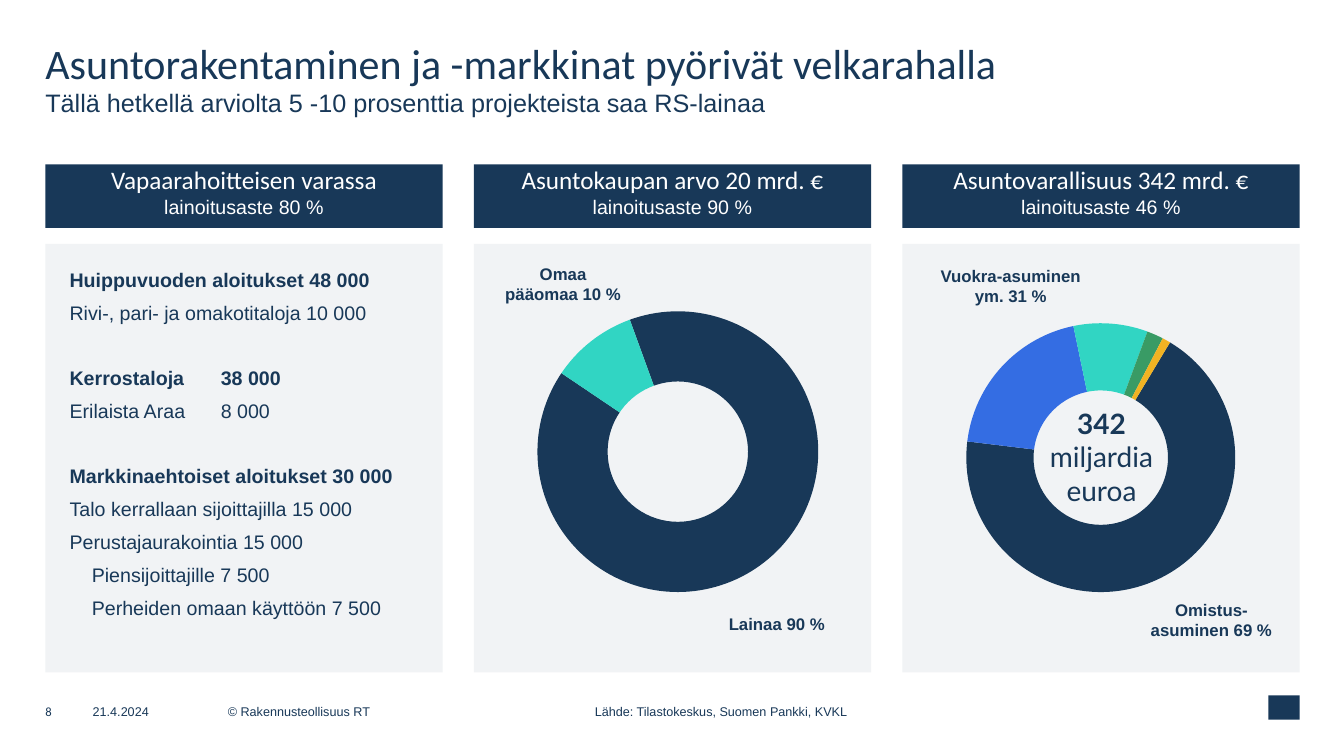
from pptx import Presentation
from pptx.chart.data import CategoryChartData
from pptx.dml.color import RGBColor
from pptx.enum import chart as charts, shapes, text
from pptx.oxml import parse_xml
from pptx.oxml.ns import nsdecls, qn
from pptx.util import Inches, Pt

NAVY = RGBColor(0x18, 0x38, 0x58)
BLUE = RGBColor(0x34, 0x6D, 0xE3)
TEAL = RGBColor(0x31, 0xD5, 0xC3)
GREEN = RGBColor(0x39, 0x9B, 0x65)
AMBER = RGBColor(0xF1, 0xB3, 0x23)
PALE = RGBColor(0xF1, 0xF3, 0xF5)
WHITE = RGBColor(0xFF, 0xFF, 0xFF)
LEFT, CENTER = text.PP_ALIGN.LEFT, text.PP_ALIGN.CENTER
TOP, MIDDLE = text.MSO_ANCHOR.TOP, text.MSO_ANCHOR.MIDDLE

MARGIN, COLUMN_STEP, COLUMN_WIDTH = 0.45, 4.25, 3.94
HEADER_TOP, HEADER_HEIGHT = 1.63, 0.63
PANEL_TOP, PANEL_HEIGHT = 2.42, 4.25
FOOTER_TOP, FOOTER_HEIGHT = 6.98, 0.16

HEADERS = [
    ("Vapaarahoitteisen varassa", "lainoitusaste 80 %"),
    ("Asuntokaupan arvo 20 mrd. €", "lainoitusaste 90 %"),
    ("Asuntovarallisuus 342 mrd. €", "lainoitusaste 46 %"),
]
START_GROUPS = [
    [("Huippuvuoden aloitukset 48 000", 0), ("Rivi-, pari- ja omakotitaloja 10 000", 0)],
    [("Kerrostaloja\t38 000", 0), ("Erilaista Araa\t8 000", 0)],
    [("Markkinaehtoiset aloitukset 30 000", 0), ("Talo kerrallaan sijoittajilla 15 000", 0),
     ("Perustajaurakointia 15 000", 0), ("Piensijoittajille 7 500", 0.22),
     ("Perheiden omaan käyttöön 7 500", 0.22)],
]
FOOTERS = [
    ("8", "Calibri", 0.45, 0.47),
    ("21.4.2024", "Arial", 0.92, 1.34),
    ("© Rakennusteollisuus RT", "Arial", 2.26, 3.5),
    ("Lähde: Tilastokeskus, Suomen Pankki, KVKL", "Arial", 5.9, 2.79),
]


def write(frame, words, font="Arial", size=14, color=NAVY, bold=False,
          align=LEFT, before=0, indent=0, tab=None, new=True):
    """Add words as a new paragraph, or as a run of the last one."""
    para = frame.paragraphs[-1]
    if para.runs and new:
        para = frame.add_paragraph()
    if not para.runs:
        para.alignment = align
        para.space_before = Pt(before)
        props = para._p.get_or_add_pPr()
        props.set("marL", str(Inches(indent)))
        props.set("indent", "0")
        props.append(parse_xml(f"<a:buNone {nsdecls('a')}/>"))
        if tab:
            props.append(parse_xml(
                f'<a:tabLst {nsdecls("a")}><a:tab pos="{Inches(tab)}" algn="l"/></a:tabLst>'))
    run = para.add_run()
    run.text = words
    run.font.name, run.font.size, run.font.bold = font, Pt(size), bold
    run.font.color.rgb = color


def fit(shape, box, inset=0, anchor=TOP):
    """Place a text shape in its box and return its frame."""
    shape.left, shape.top, shape.width, shape.height = map(Inches, box)
    frame = shape.text_frame
    frame.word_wrap = True
    frame.auto_size = text.MSO_AUTO_SIZE.NONE
    frame.vertical_anchor = anchor
    frame.margin_left = frame.margin_right = Inches(inset)
    frame.margin_top = frame.margin_bottom = Inches(inset)
    return frame


def fill(shape, color):
    """Fill a shape with a plain colour and no outline."""
    shape.fill.solid()
    shape.fill.fore_color.rgb = color
    shape.line.fill.background()


def text_box(slide, box, inset=0.05, anchor=TOP):
    """Add a text box and return its frame."""
    return fit(slide.shapes.add_textbox(*map(Inches, box)), box, inset, anchor)


def add_title(slide, box):
    """Write the title with its smaller second line."""
    frame = fit(slide.shapes.title, box)
    write(frame, "Asuntorakentaminen ja -markkinat pyörivät velkarahalla",
          font="Calibri", size=30)
    frame.paragraphs[0].add_line_break()
    write(frame, "Tällä hetkellä arviolta 5 -10 prosenttia projekteista saa RS-lainaa",
          size=18, new=False)


def add_header(holder, box, heading, loan_rate):
    """Fill one column header."""
    frame = fit(holder, box)
    fill(holder, NAVY)
    write(frame, heading, font="Calibri", size=18, color=WHITE, align=CENTER)
    write(frame, loan_rate, color=WHITE, align=CENTER)


def add_starts(holder, box):
    """Fill the panel that lists housing starts by group."""
    frame = fit(holder, box, inset=0.24)
    fill(holder, PALE)
    for group_no, group in enumerate(START_GROUPS):
        for row_no, (words, indent) in enumerate(group):
            group_gap = 29.5 if group_no else 0
            write(frame, words, bold=row_no == 0, indent=indent, tab=2,
                  before=6.75 if row_no else group_gap)


def add_doughnut(slide, box, values, colors, start, plot_area):
    """Add a doughnut chart on a pale panel."""
    data = CategoryChartData()
    data.categories = [str(n + 1) for n in range(len(values))]
    data.add_series("Series 1", values)
    chart = slide.shapes.add_chart(
        charts.XL_CHART_TYPE.DOUGHNUT, *map(Inches, box), data).chart
    chart.has_legend = chart.has_title = False
    chart.font.name, chart.font.size = "Arial", Pt(10)
    plot = chart.plots[0]
    plot.vary_by_categories = True
    for number, color in enumerate(colors):
        slice_format = plot.series[0].points[number].format
        fill(slice_format, color)

    root = chart.element
    for tag, value in (("c:firstSliceAng", start), ("c:holeSize", 50)):
        next(root.iter(qn(tag))).set("val", str(value))
    area = next(root.iter(qn("c:plotArea")))
    for layout in area.findall(qn("c:layout")):
        area.remove(layout)
    sides = "".join(f'<c:{side} val="{value}"/>' for side, value in zip("xywh", plot_area))
    area.insert(0, parse_xml(
        f'<c:layout {nsdecls("c")}><c:manualLayout><c:layoutTarget val="inner"/>'
        f'<c:xMode val="edge"/><c:yMode val="edge"/>{sides}</c:manualLayout></c:layout>'))
    root.find(qn("c:chart")).addnext(parse_xml(
        f'<c:spPr {nsdecls("c", "a")}><a:solidFill><a:srgbClr val="{PALE}"/></a:solidFill>'
        '<a:ln><a:noFill/></a:ln></c:spPr>'))


def add_labels(slide, box, labels):
    """Write slice labels at offsets from the panel's corner."""
    left, top = box[:2]
    for lines, dx, dy, width in labels:
        frame = text_box(slide, (left + dx, top + dy, width, 0.5))
        for line in lines:
            write(frame, line, size=12, bold=True, align=CENTER)


def add_sales(slide, box):
    """Show the financing of home sales."""
    add_doughnut(slide, box, (90, 10), (NAVY, TEAL), 340, (0.16, 0.157, 0.707, 0.656))
    add_labels(slide, box, [(["Omaa", "pääomaa 10 %"], -0.09, 0.15, 1.95),
                            (["Lainaa 90 %"], 2.03, 3.62, 1.95)])


def add_wealth(slide, box):
    """Show housing wealth with its total in the middle."""
    add_doughnut(slide, box, (69, 20, 9, 2, 1), (NAVY, BLUE, TEAL, GREEN, AMBER),
                 31, (0.161, 0.185, 0.677, 0.628))
    total = text_box(slide, (box[0] + 1.23, box[1] + 1.56, 1.49, 1.11))
    total.margin_left = total.margin_right = Inches(0.1)
    write(total, "342", font="Lato", size=20, bold=True, align=CENTER)
    write(total, " miljardia euroa", font="Lato", size=20, new=False)
    add_labels(slide, box, [(["Vuokra-asuminen ym. 31 %"], 0.19, 0.17, 1.77),
                            (["Omistus-", "asuminen 69 %"], 2.07, 3.48, 1.99)])


def add_footer(slide, top, height):
    """Write the footer line and the plain mark at its end."""
    for words, font, left, width in FOOTERS:
        write(text_box(slide, (left, top, width, height), 0, MIDDLE), words, font=font, size=9)
    mark = slide.shapes.add_shape(shapes.MSO_SHAPE.RECTANGLE, Inches(12.58),
                                  Inches(top - 0.08), Inches(0.31), Inches(0.24))
    mark.shadow.inherit = False
    fill(mark, NAVY)


def main():
    """Build the slide and save it."""
    deck = Presentation()
    deck.slide_width, deck.slide_height = Inches(13.33), Inches(7.5)
    slide = deck.slides.add_slide(deck.slide_layouts.get_by_name("Comparison"))
    *header_holders, starts_holder = list(slide.placeholders)[1:]
    lefts = [MARGIN + COLUMN_STEP * n for n in range(3)]
    panels = [(left, PANEL_TOP, COLUMN_WIDTH, PANEL_HEIGHT) for left in lefts]

    add_title(slide, (MARGIN, 0.37, 12.44, 1.1))
    for holder, left, words in zip(header_holders, lefts, HEADERS):
        add_header(holder, (left, HEADER_TOP, COLUMN_WIDTH, HEADER_HEIGHT), *words)
    add_starts(starts_holder, panels[0])
    add_sales(slide, panels[1])
    add_wealth(slide, panels[2])
    add_footer(slide, FOOTER_TOP, FOOTER_HEIGHT)
    deck.save("out.pptx")


if __name__ == "__main__":
    main()
